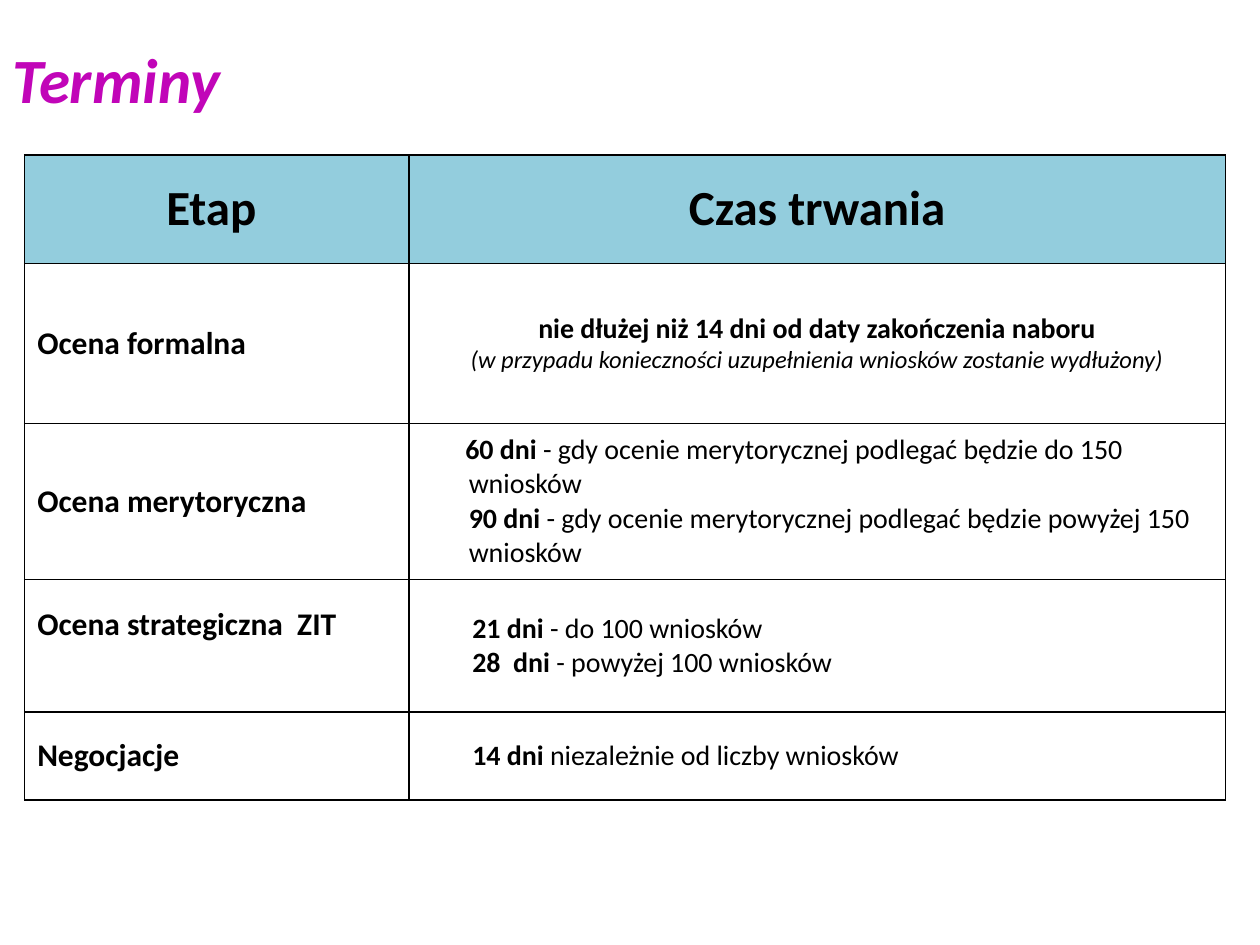
from lxml import etree
from pptx import Presentation
from pptx.dml.color import RGBColor
from pptx.enum.text import MSO_ANCHOR, PP_ALIGN
from pptx.oxml.ns import qn
from pptx.util import Pt

MIDDLE = MSO_ANCHOR.MIDDLE
LEFT, CENTER = PP_ALIGN.LEFT, PP_ALIGN.CENTER
TITLE_ONLY = 5
BREAK = "\n"

COLORS = {"title": "C105B8", "text": "000000", "border": "000000",
          "header": "93CDDD", "body": "FFFFFF"}
COLUMN_WIDTHS = [219.6, 466.56]
ROW_HEIGHTS = [61.92, 91.44, 89.28, 75.6, 50.4]

TITLE = {"size": Pt(36), "bold": True, "italic": True}
HEADER = {"size": Pt(28), "bold": True}
STAGE = {"size": Pt(18), "bold": True}
TERM = {"size": Pt(16), "bold": True}
DETAIL = {"size": Pt(16), "bold": False}
REMARK = {"size": Pt(14), "bold": False, "italic": True}

HEADINGS = ["Etap ", "Czas trwania"]
STAGES = ["Ocena formalna", "Ocena merytoryczna", "Ocena strategiczna  ZIT", "Negocjacje"]
DURATIONS = [
    {"align": CENTER, "paragraphs": [[
        ("nie dłużej niż 14 dni od daty zakończenia naboru", TERM), BREAK,
        ("(w przypadu konieczności uzupełnienia wniosków zostanie wydłużony)", REMARK)]]},
    {"margin": 27, "indent": -2, "paragraphs": [[
        ("60 dni ", TERM),
        ("- gdy ocenie merytorycznej podlegać będzie do 150 wniosków", DETAIL), BREAK,
        ("90 dni ", TERM),
        ("- gdy ocenie merytorycznej podlegać będzie powyżej 150 wniosków", DETAIL)]]},
    {"margin": 29, "paragraphs": [
        [("21 dni ", TERM), ("- do 100 wniosków", DETAIL)],
        [("28  dni ", TERM), ("- powyżej 100 wniosków", DETAIL)]]},
    {"margin": 29, "paragraphs": [
        [("14 dni ", TERM), ("niezależnie od liczby wniosków", DETAIL)]]},
]


def add_span(para, text, style, color="text"):
    span = para.add_run()
    span.text = text
    span.font.name = "Calibri"
    span.font.color.rgb = RGBColor.from_string(COLORS[color])
    for name, value in style.items():
        setattr(span.font, name, value)


def write_paragraphs(frame, paragraphs, align=LEFT, margin=0, indent=0):
    for index, spans in enumerate(paragraphs):
        para = frame.add_paragraph() if index else frame.paragraphs[0]
        para.alignment = align
        properties = para._p.get_or_add_pPr()
        properties.set("marL", str(Pt(margin)))
        properties.set("indent", str(Pt(indent)))
        for span in spans:
            if span == BREAK:
                para.add_line_break()
            else:
                add_span(para, *span)


def add_title(page):
    box = page.shapes.title
    place = {"left": 0, "top": 0, "width": Pt(648), "height": Pt(90)}
    for name, value in place.items():
        setattr(box, name, value)
    box.text_frame.vertical_anchor = MIDDLE
    write_paragraphs(box.text_frame, [[("Terminy", TITLE, "title")]])


def format_cell(cell, fill):
    properties = cell._tc.get_or_add_tcPr()
    for side in ("lnL", "lnR", "lnT", "lnB"):
        line = etree.SubElement(properties, qn(f"a:{side}"), w=str(Pt(1)))
        solid = etree.SubElement(line, qn("a:solidFill"))
        etree.SubElement(solid, qn("a:srgbClr"), val=COLORS["border"])
    cell.fill.solid()
    cell.fill.fore_color.rgb = RGBColor.from_string(COLORS[fill])
    cell.vertical_anchor = MIDDLE


def add_schedule(page):
    frame = page.shapes.add_table(
        len(ROW_HEIGHTS), len(COLUMN_WIDTHS), Pt(14.1), Pt(88.6),
        Pt(sum(COLUMN_WIDTHS)), Pt(sum(ROW_HEIGHTS)))
    table = frame.table
    for column, width in zip(table.columns, COLUMN_WIDTHS):
        column.width = Pt(width)
    for row, height in zip(table.rows, ROW_HEIGHTS):
        row.height = Pt(height)
    for index, row in enumerate(table.rows):
        for cell in row.cells:
            format_cell(cell, "body" if index else "header")
    for column, heading in enumerate(HEADINGS):
        write_paragraphs(table.cell(0, column).text_frame, [[(heading, HEADER)]], CENTER)
    for row, (stage, duration) in enumerate(zip(STAGES, DURATIONS), start=1):
        write_paragraphs(table.cell(row, 0).text_frame, [[(stage, STAGE)]])
        write_paragraphs(table.cell(row, 1).text_frame, **duration)
    table.cell(3, 0).margin_bottom = Pt(27.6)


def main():
    deck = Presentation()
    deck.slide_width, deck.slide_height = Pt(720), Pt(540)
    page = deck.slides.add_slide(deck.slide_layouts[TITLE_ONLY])
    add_title(page)
    add_schedule(page)
    deck.save("out.pptx")


if __name__ == "__main__":
    main()
